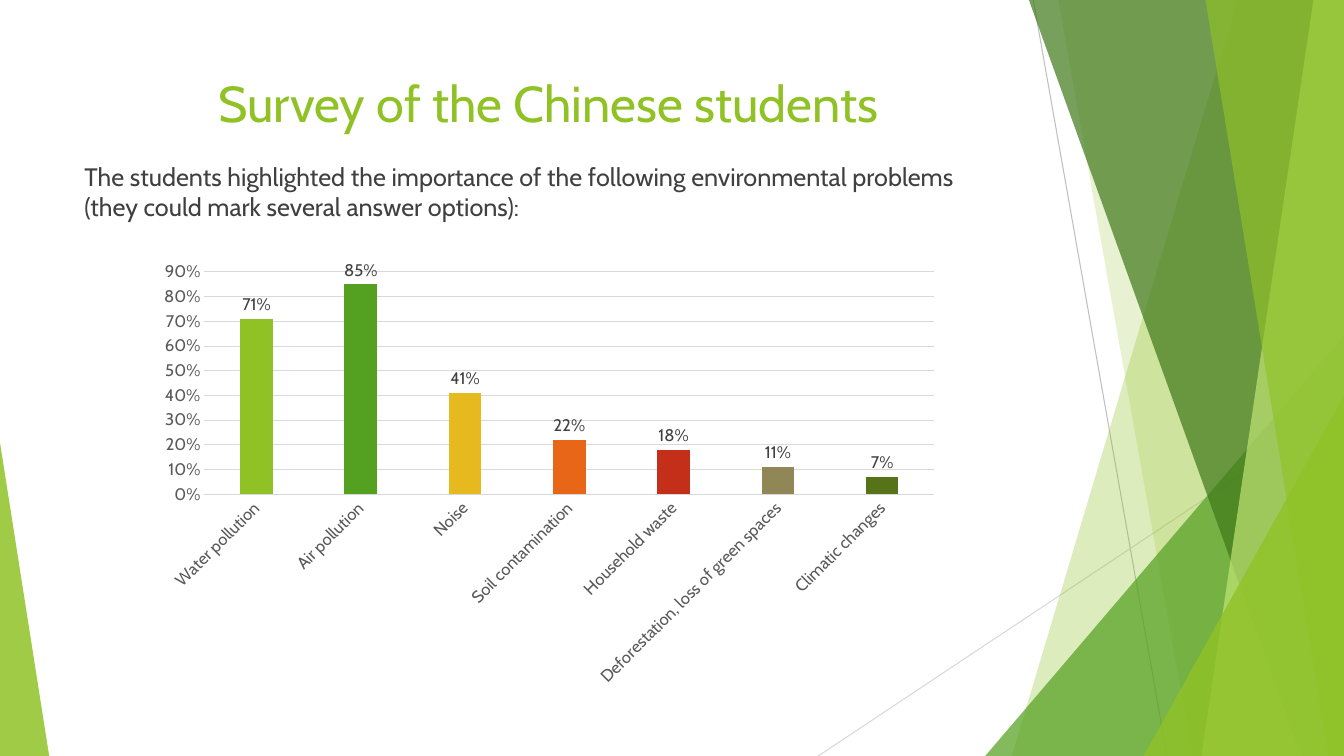
from lxml import etree
from pptx import Presentation
from pptx.chart.data import CategoryChartData
from pptx.dml.color import RGBColor
from pptx.enum.chart import XL_CHART_TYPE, XL_LABEL_POSITION, XL_TICK_MARK
from pptx.enum.shapes import MSO_CONNECTOR, MSO_SHAPE
from pptx.enum.text import MSO_ANCHOR, PP_ALIGN
from pptx.oxml.ns import qn
from pptx.util import Cm, Pt

COLUMNS = XL_CHART_TYPE.COLUMN_CLUSTERED
OUTSIDE_END = XL_LABEL_POSITION.OUTSIDE_END
NO_TICK = XL_TICK_MARK.NONE
STRAIGHT = MSO_CONNECTOR.STRAIGHT
TRIANGLE = MSO_SHAPE.ISOSCELES_TRIANGLE
TOP = MSO_ANCHOR.TOP
LEFT, CENTER = PP_ALIGN.LEFT, PP_ALIGN.CENTER

FONT = "Cabin"
WIDTH, HEIGHT = 33.87, 19.05
LIME, GREEN, DARK_GREEN, PALE_LIME = "90C226", "54A021", "3F7819", "C0E474"
TEXT_GREY, AXIS_GREY, GRID_GREY, LINE_GREY = "404040", "595959", "D9D9D9", "BFBFBF"

PROBLEMS = [
    ("Water pollution", 0.71, LIME),
    ("Air pollution", 0.85, GREEN),
    ("Noise", 0.41, "E6B91E"),
    ("Soil contamination", 0.22, "E76618"),
    ("Household waste", 0.18, "C42F1A"),
    ("Deforestation, loss of green spaces", 0.11, "918655"),
    ("Climatic changes", 0.07, "567417"),
]


def rgb(hex_color):
    return RGBColor.from_string(hex_color)


def style_font(font, size, color):
    font.name = FONT
    font.size = Pt(size)
    font.color.rgb = rgb(color)


def style_line(line, color):
    line.color.rgb = rgb(color)
    line.width = Pt(0.75)


def tint(shape, color, opacity):
    """Fill without outline or shadow; opacity is in percent."""
    shape.shadow.inherit = False
    shape.line.fill.background()
    shape.fill.solid()
    shape.fill.fore_color.rgb = rgb(color)
    color_node = shape._element.spPr.find(".//" + qn("a:srgbClr"))
    etree.SubElement(color_node, qn("a:alpha")).set("val", str(opacity * 1000))


def add_ray(slide, start, end, color):
    ray = slide.shapes.add_connector(STRAIGHT, *map(Cm, start + end))
    style_line(ray.line, color)
    etree.SubElement(ray._element.spPr, qn("a:effectLst"))


def add_band(slide, box, top_x, bottom_x, color, opacity):
    """Full-height band from a slanted left edge to the right edge of the box."""
    left, top, width, height = box
    right, bottom = left + width, top + height
    outline = slide.shapes.build_freeform(Cm(left + top_x), Cm(top))
    corners = [(right, top), (right, bottom), (left + bottom_x, bottom)]
    outline.add_line_segments([(Cm(x), Cm(y)) for x, y in corners])
    tint(outline.convert_to_shape(), color, opacity)


def add_corner(slide, box, apex, color, opacity):
    """Right-angled triangle; apex is 0 for the left side, 1 for the right."""
    corner = slide.shapes.add_shape(TRIANGLE, *map(Cm, box))
    corner.adjustments[0] = apex
    tint(corner, color, opacity)


def add_facets(slide, box):
    """Overlapping green facets on the right and the wedge at lower left."""
    left, top, width, height = box
    right, bottom = left + width, top + height

    def right_corner(corner_width, corner_height, color, opacity):
        corner_box = (right - corner_width, bottom - corner_height,
                      corner_width, corner_height)
        add_corner(slide, corner_box, 1, color, opacity)

    add_ray(slide, (left + 26.04, top), (left + 29.41, bottom), LINE_GREY)
    add_ray(slide, (right, top + 10.24), (left + 20.62, bottom), GRID_GREY)
    add_band(slide, box, 31.19, 25.5, LIME, 30)
    add_band(slide, box, 26.67, 30.05, LIME, 20)
    right_corner(9.04, 10.59, GREEN, 72)
    add_band(slide, box, 25.93, 32.79, DARK_GREEN, 70)
    add_band(slide, box, 33.1, 30.28, PALE_LIME, 70)
    add_band(slide, box, 30.38, 33.48, LIME, 65)
    right_corner(5.05, 9.07, LIME, 80)
    add_corner(slide, (left, bottom - 7.9, 1.24, 7.9), 0, LIME, 85)


def add_paragraph_box(slide, box, wording, size, color, align, space_before=0):
    frame = slide.shapes.add_textbox(*map(Cm, box)).text_frame
    frame.word_wrap = True
    frame.vertical_anchor = TOP
    paragraph = frame.paragraphs[0]
    paragraph.alignment = align
    paragraph.space_before = Pt(space_before)
    run = paragraph.add_run()
    run.text = wording
    style_font(run.font, size, color)


def add_problem_chart(slide, box):
    names, shares, colors = zip(*PROBLEMS)
    survey = CategoryChartData(number_format="0%")
    survey.categories = names
    survey.add_series("Series 1", shares)
    chart = slide.shapes.add_chart(COLUMNS, *map(Cm, box), survey).chart
    chart.has_title = False
    chart.has_legend = False
    style_font(chart.font, 10, "000000")

    problem_axis, share_axis = chart.category_axis, chart.value_axis
    for axis in (problem_axis, share_axis):
        axis.major_tick_mark = axis.minor_tick_mark = NO_TICK
        style_font(axis.tick_labels.font, 12, AXIS_GREY)
    style_line(problem_axis.format.line, GRID_GREY)
    label_body = problem_axis._element.find(qn("c:txPr")).find(qn("a:bodyPr"))
    label_body.set("rot", str(-45 * 60000))
    share_axis.minimum_scale, share_axis.maximum_scale = 0, 0.9
    share_axis.major_unit = 0.1
    share_axis.tick_labels.number_format = "0%"
    share_axis.tick_labels.number_format_is_linked = False
    share_axis.format.line.fill.background()
    style_line(share_axis.major_gridlines.format.line, GRID_GREY)

    plot = chart.plots[0]
    plot.gap_width = 219
    plot.vary_by_categories = False
    share_series = plot.series[0]
    for index, color in enumerate(colors):
        column_fill = share_series.points[index].format.fill
        column_fill.solid()
        column_fill.fore_color.rgb = rgb(color)
    labels = share_series.data_labels
    labels.show_value = True
    labels.position = OUTSIDE_END
    labels.number_format = "0%"
    labels.number_format_is_linked = False
    style_font(labels.font, 12, TEXT_GREY)


def add_survey_slide(deck, box):
    slide = deck.slides.add_slide(deck.slide_layouts[6])
    left, top, _, _ = box
    add_facets(slide, box)
    add_paragraph_box(slide, (left + 1.88, top + 1.7, 23.88, 3.66),
                      "Survey of the Chinese students", 36, LIME, CENTER)
    add_paragraph_box(slide, (left + 1.88, top + 3.94, 23.88, 12.85),
                      "The students highlighted the importance of the following "
                      "environmental problems (they could mark several answer options):",
                      18, TEXT_GREY, LEFT, space_before=10)
    add_problem_chart(slide, (left + 3.73, top + 6.38, 20.22, 11.15))


def main():
    deck = Presentation()
    deck.slide_width, deck.slide_height = Cm(WIDTH), Cm(HEIGHT)
    add_survey_slide(deck, (0, 0, WIDTH, HEIGHT))
    deck.save("out.pptx")


if __name__ == "__main__":
    main()
